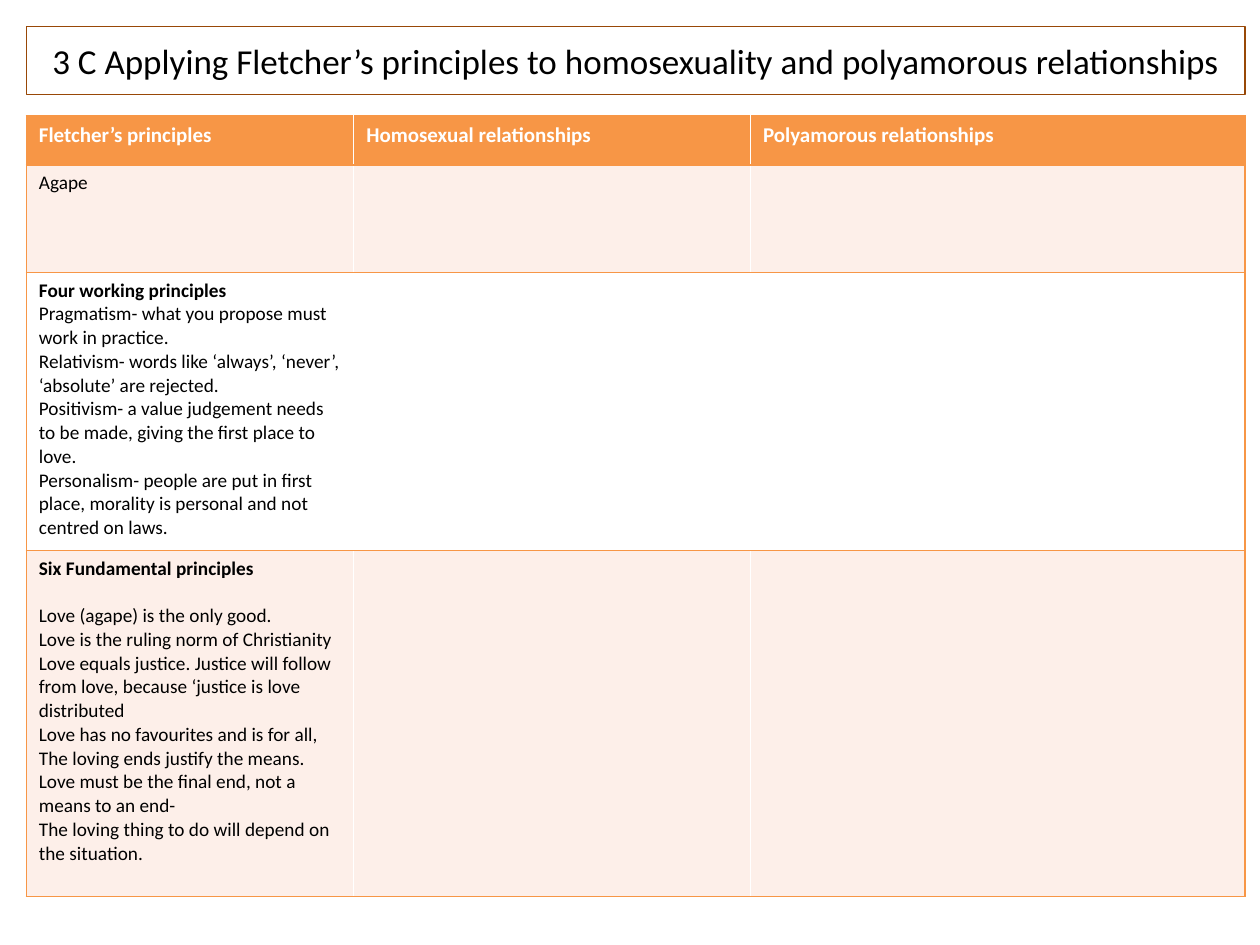
import pptx
import pptx.util
import pptx.dml.color
import pptx.enum.text
import pptx.oxml
import pptx.oxml.ns

Cm = pptx.util.Cm
Pt = pptx.util.Pt
RGB = pptx.dml.color.RGBColor

ORANGE = RGB(0xF7, 0x96, 0x46)
BROWN = RGB(0x98, 0x48, 0x07)
PEACH = RGB(0xFD, 0xEF, 0xE9)
WHITE = RGB(0xFF, 0xFF, 0xFF)
BLACK = RGB(0, 0, 0)

LEFT, WIDTH = Cm(0.53), Cm(24.57)
COLS = [Cm(6.6), Cm(8), Cm(9.97)]
ROWS = [Cm(0.99), Cm(2.16), Cm(5.61), Cm(6.97)]

TITLE = "3 C Applying Fletcher’s principles to homosexuality and polyamorous relationships"
HEADS = ["Fletcher’s principles", "Homosexual relationships", "Polyamorous relationships"]
AGAPE = ["Agape"]
WORKING = [
    "Four working principles",
    "Pragmatism- what you propose must work in practice.",
    "Relativism- words like ‘always’, ‘never’, ‘absolute’ are rejected.",
    "Positivism- a value judgement needs to be made, giving the first place to love.",
    "Personalism- people are put in first place, morality is personal and not centred on laws.",
]
BASIC = [
    "Six Fundamental principles",
    "Love (agape) is the only good.",
    "Love is the ruling norm of Christianity",
    "Love equals justice. Justice will follow from love, because ‘justice is love distributed",
    "Love has no favourites and is for all,",
    "The loving ends justify the means. Love must be the final end, not a means to an end-",
    "The loving thing to do will depend on the situation.",
]


def style(par, size, color, bold=False):
    font = par.font
    font.name, font.size, font.bold = "Calibri", Pt(size), bold
    font.color.rgb = color


def add_title(slide):
    box = slide.shapes.title
    box.left, box.top, box.width, box.height = LEFT, Cm(0.53), WIDTH, Cm(1.37)
    box.line.color.rgb = BROWN
    box.line.width = Pt(0.75)
    frame = box.text_frame
    frame.text = TITLE
    frame.word_wrap = True
    frame.auto_size = pptx.enum.text.MSO_AUTO_SIZE.NONE
    frame.vertical_anchor = pptx.enum.text.MSO_ANCHOR.MIDDLE
    par = frame.paragraphs[0]
    par.alignment = pptx.enum.text.PP_ALIGN.CENTER
    style(par, 20, BLACK)


def add_edges(cell, sides):
    """Draw orange lines on the given sides, in schema order L, R, T, B."""
    props = cell._tc.get_or_add_tcPr()
    for spot, side in enumerate(sides):
        line = pptx.oxml.parse_xml(
            f'<a:ln{side} {pptx.oxml.ns.nsdecls("a")} w="{Pt(1)}">'
            f'<a:solidFill><a:srgbClr val="{ORANGE}"/></a:solidFill></a:ln{side}>'
        )
        props.insert(spot, line)


def write(cell, lines, size, color, bold_first):
    cell.text = "\n".join(lines)
    for i, par in enumerate(cell.text_frame.paragraphs):
        style(par, size, color, bold_first and i == 0)


def add_table(slide):
    frame = slide.shapes.add_table(len(ROWS), len(COLS), LEFT, Cm(2.34), WIDTH, sum(ROWS))
    table = frame.table
    for col, width in zip(table.columns, COLS):
        col.width = width
    for row, height in zip(table.rows, ROWS):
        row.height = height

    # Fills and the outer frame with row lines
    last = len(COLS) - 1
    for r, fill in enumerate([ORANGE, PEACH, WHITE, PEACH]):
        for c in range(len(COLS)):
            cell = table.cell(r, c)
            cell.fill.solid()
            cell.fill.fore_color.rgb = fill
            add_edges(cell, {0: "LTB", last: "RTB"}.get(c, "TB"))

    # Header row, then the principles down the first column
    for c, head in enumerate(HEADS):
        write(table.cell(0, c), [head], 12, WHITE, True)
    for r, lines in enumerate([AGAPE, WORKING, BASIC], 1):
        write(table.cell(r, 0), lines, 11, BLACK, len(lines) > 1)
    table.cell(3, 0).text_frame.paragraphs[0].space_after = Pt(13.4)


def main():
    deck = pptx.Presentation()
    deck.slide_width, deck.slide_height = Cm(25.4), Cm(19.05)
    slide = deck.slides.add_slide(deck.slide_layouts[5])
    add_title(slide)
    add_table(slide)
    deck.save("out.pptx")


if __name__ == "__main__":
    main()
